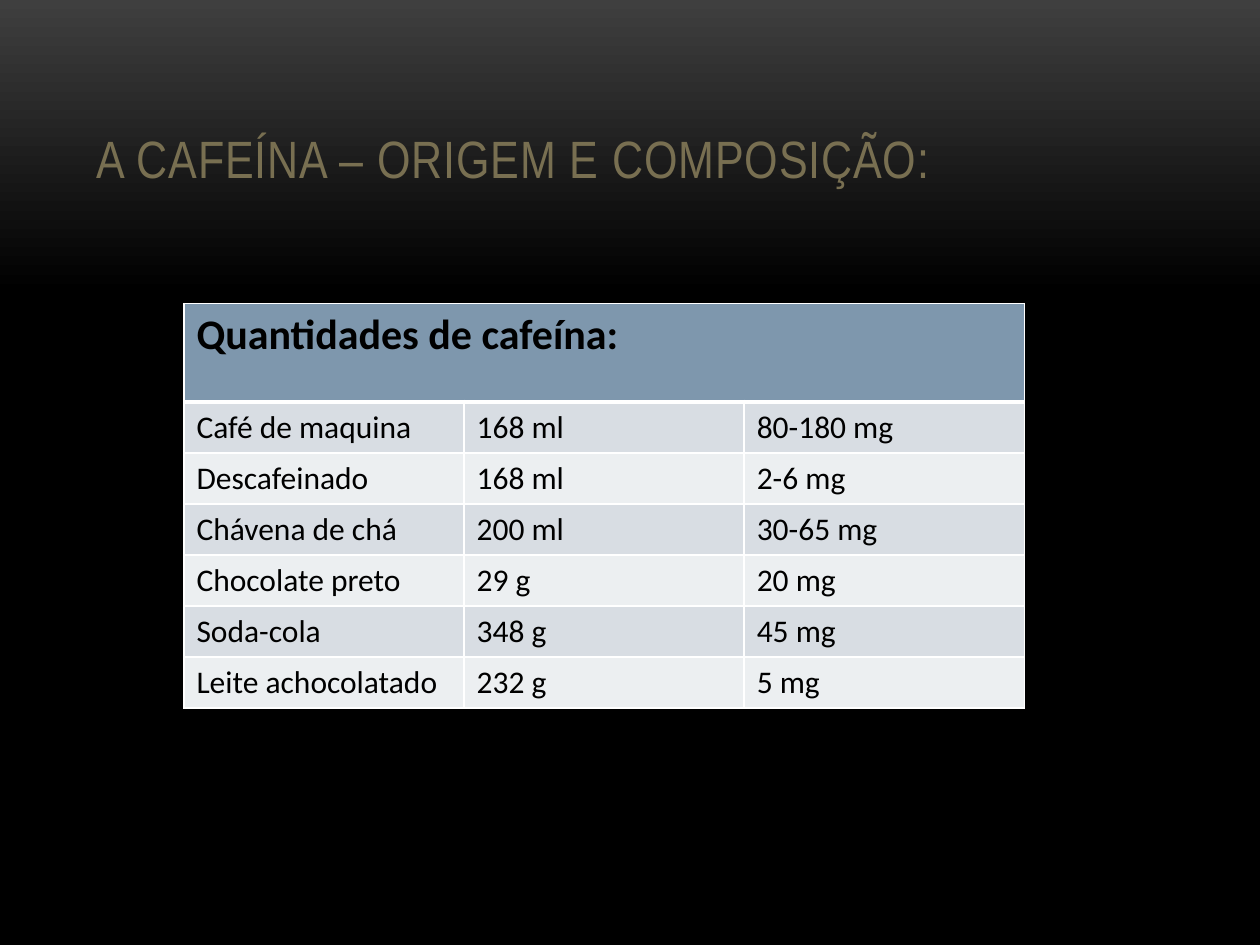
from lxml import etree
from pptx import Presentation
from pptx.dml.color import RGBColor
from pptx.enum import text
from pptx.oxml import ns
from pptx.util import Inches, Pt


def color(value):
    return RGBColor.from_string(value)


def border(cell, side, width):
    ln = etree.SubElement(cell._tc.get_or_add_tcPr(), ns.qn(f"a:ln{side}"), w=str(Pt(width)))
    fill = etree.SubElement(ln, ns.qn("a:solidFill"))
    etree.SubElement(fill, ns.qn("a:srgbClr"), val="FFFFFF")


prs = Presentation()
prs.slide_width = Inches(10)
prs.slide_height = Inches(7.5)
s = prs.slides.add_slide(prs.slide_layouts[6])

bg = s.background.fill
bg.gradient()
bg.gradient_angle = 270
for stop, (position, value) in zip(bg.gradient_stops, [(0, "3F3F3F"), (0.31, "000000")]):
    stop.position = position
    stop.color.rgb = color(value)

title = s.shapes.add_textbox(Inches(0.67), Inches(0.3), Inches(8.67), Inches(1.25))
tf = title.text_frame
tf.word_wrap = True
tf.vertical_anchor = text.MSO_ANCHOR.BOTTOM
tf.text = "A CAFEÍNA – ORIGEM E COMPOSIÇÃO:"
r = tf.paragraphs[0].runs[0]
r.font.name = "Arial Narrow"
r.font.size = Pt(30)
r.font.color.rgb = color("786F51")
r.font._element.set("spc", "50")

rows = [
    ("Quantidades de cafeína:", "", ""),
    ("Café de maquina", "168 ml", "80-180 mg"),
    ("Descafeinado", "168 ml", "2-6 mg"),
    ("Chávena de chá", "200 ml", "30-65 mg"),
    ("Chocolate preto", "29 g", "20 mg"),
    ("Soda-cola", "348 g", "45 mg"),
    ("Leite achocolatado", "232 g", "5 mg"),
]
table = s.shapes.add_table(
    len(rows), 3, Inches(1.46), Inches(2.41), Inches(6.67), Inches(3.21)
).table
for column in table.columns:
    column.width = Inches(6.67 / 3)

for i, values in enumerate(rows):
    header = i == 0
    table.rows[i].height = Inches(0.78 if header else 0.405)
    for j, value in enumerate(values):
        cell = table.cell(i, j)
        border(cell, "L", 1)
        border(cell, "R", 1)
        border(cell, "T", 3 if i == 1 else 1)
        border(cell, "B", 3 if header else 1)
        cell.fill.solid()
        cell.fill.fore_color.rgb = color("7E97AD" if header else "D8DDE3" if i % 2 else "ECEFF1")
        if not value:
            continue
        cell.text_frame.text = value
        r = cell.text_frame.paragraphs[0].runs[0]
        r.font.name = "Calibri"
        r.font.size = Pt(24 if header else 18)
        r.font.bold = header
        r.font.color.rgb = color("000000")
table.cell(0, 0).merge(table.cell(0, 2))

prs.save("out.pptx")
